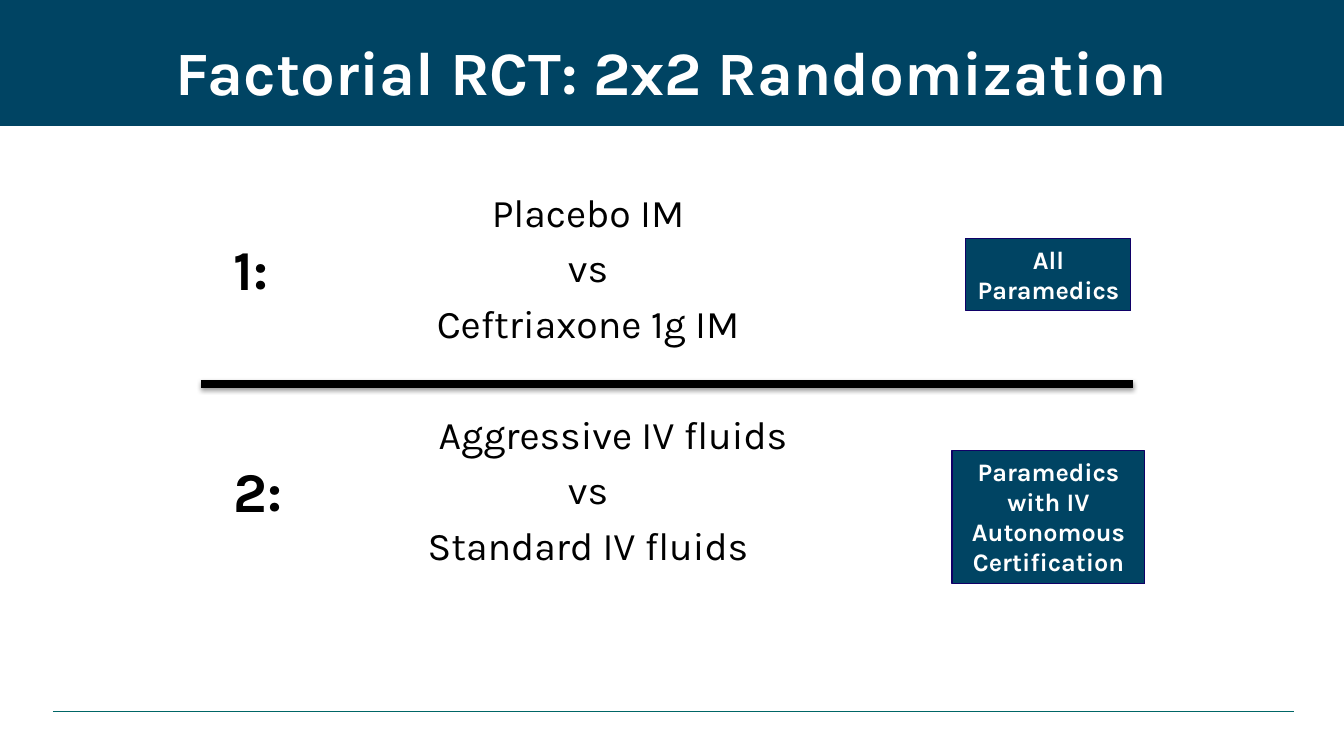
from lxml import etree
from pptx import Presentation
from pptx.dml.color import RGBColor
from pptx.enum.shapes import MSO_CONNECTOR, MSO_SHAPE
from pptx.enum.text import MSO_ANCHOR, PP_ALIGN
from pptx.oxml.ns import qn
from pptx.util import Emu, Pt

STRAIGHT = MSO_CONNECTOR.STRAIGHT
RECTANGLE = MSO_SHAPE.RECTANGLE
TOP = MSO_ANCHOR.TOP
LEFT, CENTER = PP_ALIGN.LEFT, PP_ALIGN.CENTER

FONT = "Karla"
COLORS = {
    "band": "004463",
    "badge_line": "100067",
    "footer_line": "006666",
    "ink": "000000",
    "paper": "FFFFFF",
}
SLIDE_WIDTH, SLIDE_HEIGHT = 1344, 756
ARM_PITCH = 222


def px(length):
    return Emu(round(length * 914400 / 100.8))


def color(name):
    return RGBColor.from_string(COLORS[name])


def write_lines(text_frame, lines, size, color_name, align, bold):
    text_frame.vertical_anchor = TOP
    for index, line in enumerate(lines):
        paragraph = text_frame.paragraphs[0] if index == 0 else text_frame.add_paragraph()
        paragraph.text = line
        paragraph.alignment = align
        paragraph.font.name = FONT
        paragraph.font.size = Pt(size)
        paragraph.font.bold = bold
        paragraph.font.color.rgb = color(color_name)


def add_text(slide, box, lines, size, color_name="ink", align=LEFT, bold=False, wrap=True):
    text_frame = slide.shapes.add_textbox(*map(px, box)).text_frame
    text_frame.word_wrap = wrap
    write_lines(text_frame, lines, size, color_name, align, bold)
    return text_frame


def add_box(slide, box, line_name=None):
    shape = slide.shapes.add_shape(RECTANGLE, *map(px, box))
    shape.shadow.inherit = False
    shape.fill.solid()
    shape.fill.fore_color.rgb = color("band")
    if line_name:
        shape.line.color.rgb = color(line_name)
        shape.line.width = Pt(0.75)
    else:
        shape.line.fill.background()
    return shape


def add_badge(slide, box, lines):
    text_frame = add_box(slide, box, "badge_line").text_frame
    text_frame.word_wrap = True
    write_lines(text_frame, lines, 18, "paper", CENTER, True)


def add_rule(slide, left, right, top, color_name, width):
    rule = slide.shapes.add_connector(STRAIGHT, px(left), px(top), px(right), px(top))
    rule.line.color.rgb = color(color_name)
    rule.line.width = Pt(width)
    return etree.SubElement(rule._element.spPr, qn("a:effectLst"))


def add_shadow(effects):
    shadow = etree.SubElement(
        effects, qn("a:outerShdw"),
        blurRad=str(Pt(3.1)), dist=str(Pt(1.6)), dir="5400000", rotWithShape="0",
    )
    shade = etree.SubElement(shadow, qn("a:srgbClr"), val=COLORS["ink"])
    etree.SubElement(shade, qn("a:alpha"), val="38000")


def add_title(slide, text):
    text_frame = add_text(slide, (0, 48, SLIDE_WIDTH, 60), [text], 44, "paper", CENTER, True)
    text_frame.margin_top = text_frame.margin_bottom = 0
    text_frame.paragraphs[0].line_spacing = Pt(43)


def add_arm(slide, index, treatments, first_indent=0):
    offset = index * ARM_PITCH
    add_text(slide, (224, 230 + offset, 75, 78), [f"{index + 1}:"], 40, bold=True, wrap=False)
    text_frame = add_text(slide, (197, 183 + offset, 782, 176), treatments, 28, align=CENTER)
    for paragraph in text_frame.paragraphs:
        paragraph.space_after = Pt(6)
    if first_indent:
        properties = text_frame.paragraphs[0]._p.get_or_add_pPr()
        properties.set("marL", str(px(first_indent)))


def main():
    presentation = Presentation()
    presentation.slide_width = px(SLIDE_WIDTH)
    presentation.slide_height = px(SLIDE_HEIGHT)
    slide = presentation.slides.add_slide(presentation.slide_layouts[6])

    add_box(slide, (0, 0, SLIDE_WIDTH, 126))
    add_title(slide, "Factorial RCT: 2x2 Randomization")
    add_rule(slide, 53, 1294, 711, "footer_line", 0.5)
    add_shadow(add_rule(slide, 201, 1133, 384, "ink", 6))

    add_arm(slide, 0, ["Placebo IM", "vs", "Ceftriaxone 1g IM"])
    add_arm(slide, 1, ["Aggressive IV fluids", "vs", "Standard IV fluids"], first_indent=50)

    add_badge(slide, (966, 239, 165, 72), ["All", "Paramedics"])
    add_badge(slide, (952, 451, 193, 133), ["Paramedics with IV Autonomous Certification"])

    presentation.save("out.pptx")


if __name__ == "__main__":
    main()
